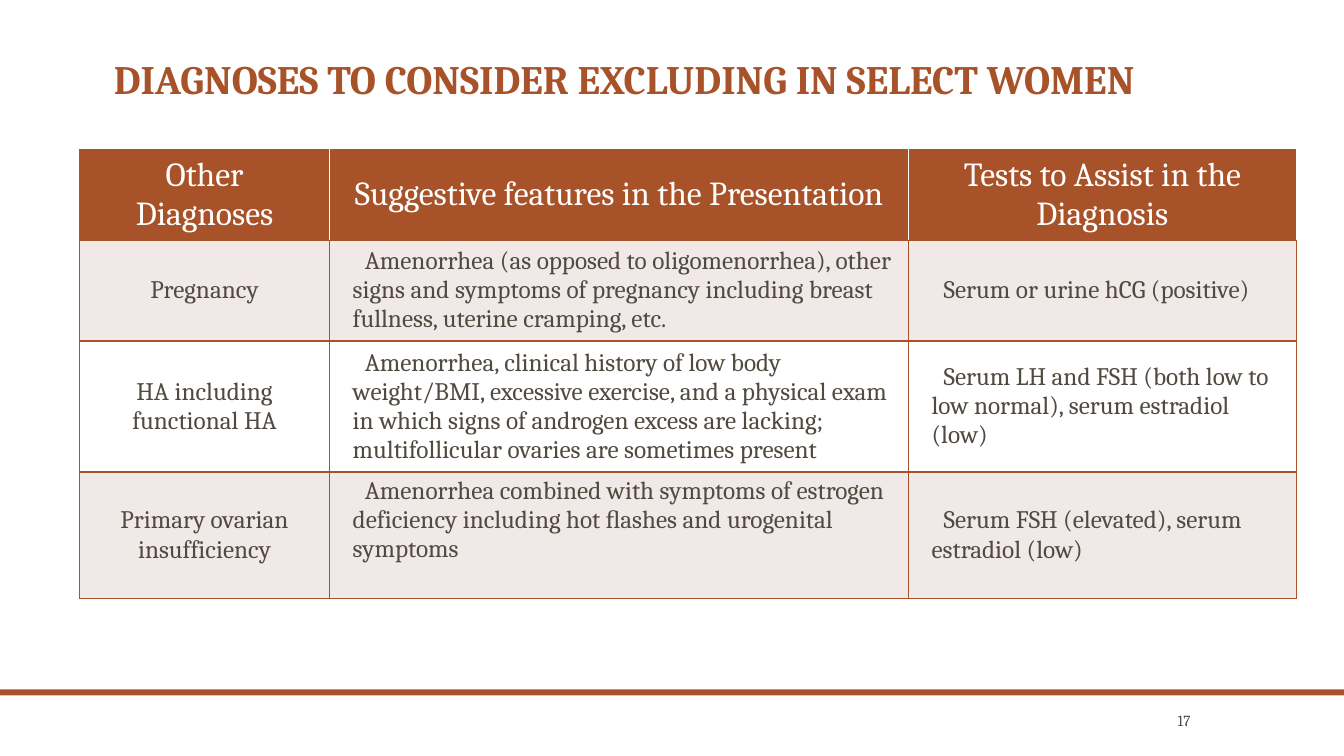
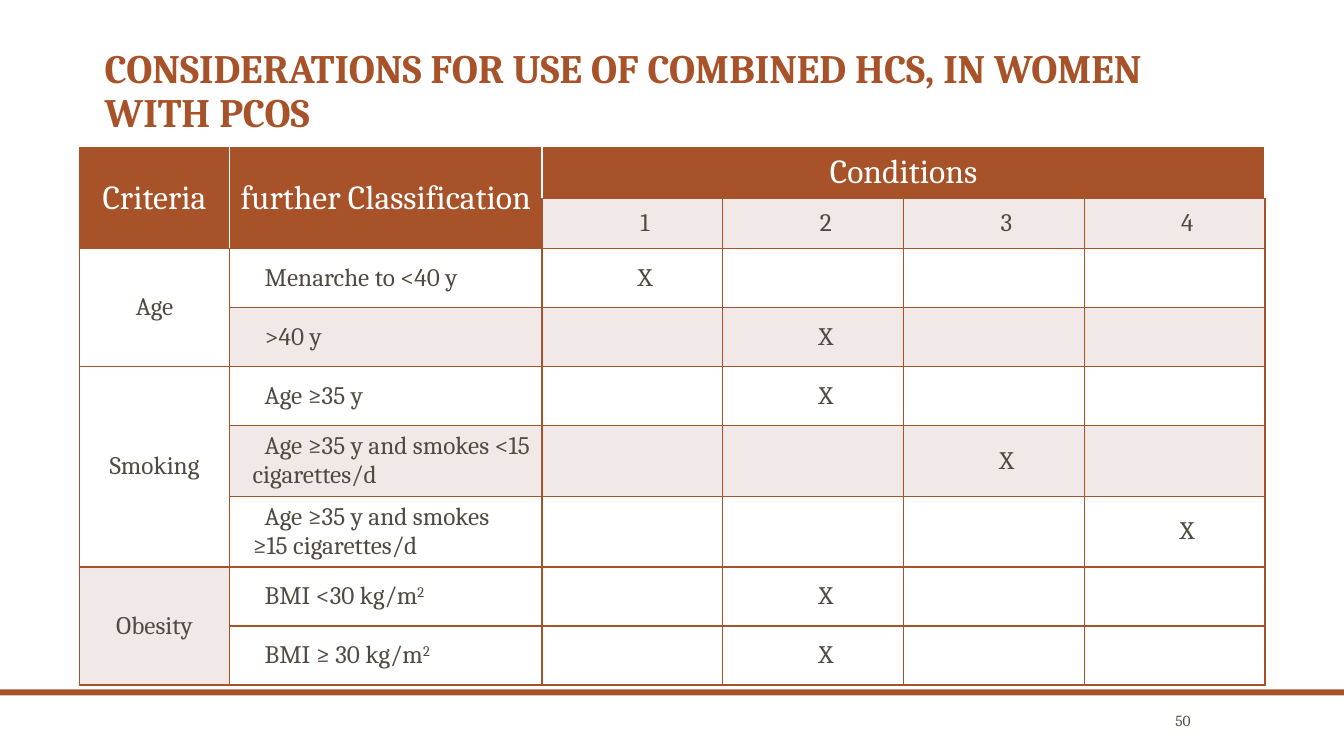
"""Builds two slides of clinical tables in one shared style."""
import pptx
import pptx.util
import pptx.dml.color
import pptx.enum.shapes
import pptx.enum.text
import pptx.oxml
import pptx.oxml.ns

Pt = pptx.util.Pt
ALIGN = pptx.enum.text.PP_ALIGN
ANCHOR = pptx.enum.text.MSO_ANCHOR
FACE = "Cambria"
RUST, INK, TINT, WHITE = "A85229", "514A40", "F1E9E8", "FFFFFF"

TESTS = [
    ["Other\nDiagnoses", "Suggestive features in the Presentation",
     "Tests to Assist in the Diagnosis"],
    ["Pregnancy",
     "Amenorrhea (as opposed to oligomenorrhea), other signs and symptoms of "
     "pregnancy including breast fullness, uterine cramping, etc.",
     "Serum or urine hCG (positive)"],
    ["HA including\nfunctional HA",
     "Amenorrhea, clinical history of low body weight/BMI, excessive exercise, "
     "and a physical exam in which signs of androgen excess are lacking; "
     "multifollicular ovaries are sometimes present",
     "Serum LH and FSH (both low to low normal), serum estradiol (low)"],
    ["Primary ovarian\ninsufficiency",
     "Amenorrhea combined with symptoms of estrogen deficiency including hot "
     "ﬂashes and urogenital symptoms",
     "Serum FSH (elevated), serum\nestradiol (low)"],
]

RULES = [
    ("Age", "Menarche to <40 y", 1),
    ("", ">40 y", 2),
    ("Smoking", "Age ≥35 y", 2),
    ("", "Age ≥35 y and smokes <15 cigarettes/d", 3),
    ("", "Age ≥35 y and smokes\n≥15 cigarettes/d", 4),
    ("Obesity", "BMI <30 kg/m^2", 2),
    ("", "BMI ≥ 30 kg/m^2", 2),
]


def rgb(code):
    """Turn a hex string into a colour."""
    return pptx.dml.color.RGBColor.from_string(code)


def style(para, size, color, align=ALIGN.LEFT, bold=False):
    """Set the font and alignment of a paragraph."""
    para.alignment = align
    font = para.font
    font.name, font.size, font.bold = FACE, Pt(size), bold
    font.color.rgb = rgb(color)


def label(slide, text, box, anchor, *look):
    """Add a text box and return its paragraph."""
    frame = slide.shapes.add_textbox(*map(Pt, box)).text_frame
    frame.word_wrap = True
    frame.vertical_anchor = anchor
    para = frame.paragraphs[0]
    para.text = text
    style(para, *look)
    return para


def base(deck, title, left, high, number):
    """Add a slide with its bar, title and page number."""
    slide = deck.slides.add_slide(deck.slide_layouts[6])
    bar = slide.shapes.add_shape(pptx.enum.shapes.MSO_SHAPE.RECTANGLE,
                                 0, Pt(492.5), deck.slide_width, Pt(4.3))
    bar.shadow.inherit = False
    bar.fill.solid()
    bar.fill.fore_color.rgb = rgb(RUST)
    bar.line.fill.background()
    head = label(slide, title, (left, 30.2, 790, high), ANCHOR.BOTTOM,
                 28.8, RUST, ALIGN.LEFT, True)
    head.line_spacing = 0.9
    label(slide, number, (802.8, 505.4, 54.7, 18.7), ANCHOR.MIDDLE,
          11, INK, ALIGN.RIGHT)
    return slide


def edge(cell, **sides):
    """Draw the four borders of a cell."""
    props = cell._tc.get_or_add_tcPr()
    for side, color in sides.items():
        props.append(pptx.oxml.parse_xml(
            f'<a:ln{side} {pptx.oxml.ns.nsdecls("a")} w="12700"><a:solidFill>'
            f'<a:srgbClr val="{color}"/></a:solidFill></a:ln{side}>'))


def write(cell, text, head, first):
    """Fill a cell with text, raising what follows a caret."""
    para = cell.text_frame.paragraphs[0]
    main, _, power = text.partition("^")
    para.text = main
    if power:
        run = para.add_run()
        run.text = power
        run._r.get_or_add_rPr().set("baseline", "30000")
    if not (head or first):
        props = para._p.get_or_add_pPr()
        props.set("marL", str(Pt(9.36)))
        props.set("indent", str(Pt(8.64)))
    mid = head or first or len(text) == 1
    style(para, 24 if head else 18, WHITE if head else INK,
          ALIGN.CENTER if mid else ALIGN.LEFT)


def grid(slide, top, cols, rows, texts, shaded, spans=()):
    """Add a table and return it."""
    table = slide.shapes.add_table(len(rows), len(cols), Pt(56.8), Pt(top),
                                   Pt(sum(cols)), Pt(sum(rows))).table
    table.first_row = table.horz_banding = False
    for col, wide in zip(table.columns, cols):
        col.width = Pt(wide)
    for row, high in zip(table.rows, rows):
        row.height = Pt(high)
    for start, end in spans:
        table.cell(*start).merge(table.cell(*end))
    for r, line in enumerate(texts):
        for c, text in enumerate(line):
            cell = table.cell(r, c)
            head = r == 0 or (r == 1 and cell.is_spanned)
            rim = WHITE if head else RUST
            edge(cell, L=rim if c else RUST, R=rim, T=RUST, B=RUST)
            cell.fill.solid()
            fill = TINT if shaded(r, c) else WHITE
            cell.fill.fore_color.rgb = rgb(RUST if head else fill)
            cell.vertical_anchor = ANCHOR.MIDDLE
            if text:
                write(cell, text, head, c == 0)
    return table


def tests(deck):
    """Build the slide of diagnoses to exclude."""
    slide = base(deck, "DIAGNOSES TO CONSIDER EXCLUDING IN SELECT WOMEN",
                 74.2, 46.8, "17")
    table = grid(slide, 106.7, [178.6, 413.5, 277.1], [62.2, 70, 90, 90.4],
                 TESTS, lambda r, c: r % 2 == 1)
    table.cell(3, 1).vertical_anchor = ANCHOR.TOP


def rules(deck):
    """Build the slide of conditions for use."""
    slide = base(deck, "CONSIDERATIONS FOR USE OF COMBINED HCS, "
                 "IN WOMEN WITH PCOS", 67.7, 70.6, "50")
    marks = range(1, 5)
    texts = [["Criteria", "further Classification", "Conditions", "", "", ""],
             ["", "", *map(str, marks)]]
    for name, kind, score in RULES:
        texts.append([name, kind, *("X" if m == score else "" for m in marks)])
    spans = [((0, 0), (1, 0)), ((0, 1), (1, 1)), ((0, 2), (0, 5)),
             ((2, 0), (3, 0)), ((4, 0), (6, 0)), ((7, 0), (8, 0))]
    grid(slide, 105.5, [107.1, 223.3] + [129.1] * 4,
         [35] * 2 + [42.2] * 3 + [49] * 2 + [42.2] * 2, texts,
         lambda r, c: r in (1, 3, 5) or (r, c) == (7, 0), spans)


def main():
    """Build and save the deck."""
    deck = pptx.Presentation()
    deck.slide_width, deck.slide_height = Pt(960), Pt(540)
    tests(deck)
    rules(deck)
    deck.save("out.pptx")


if __name__ == "__main__":
    main()
